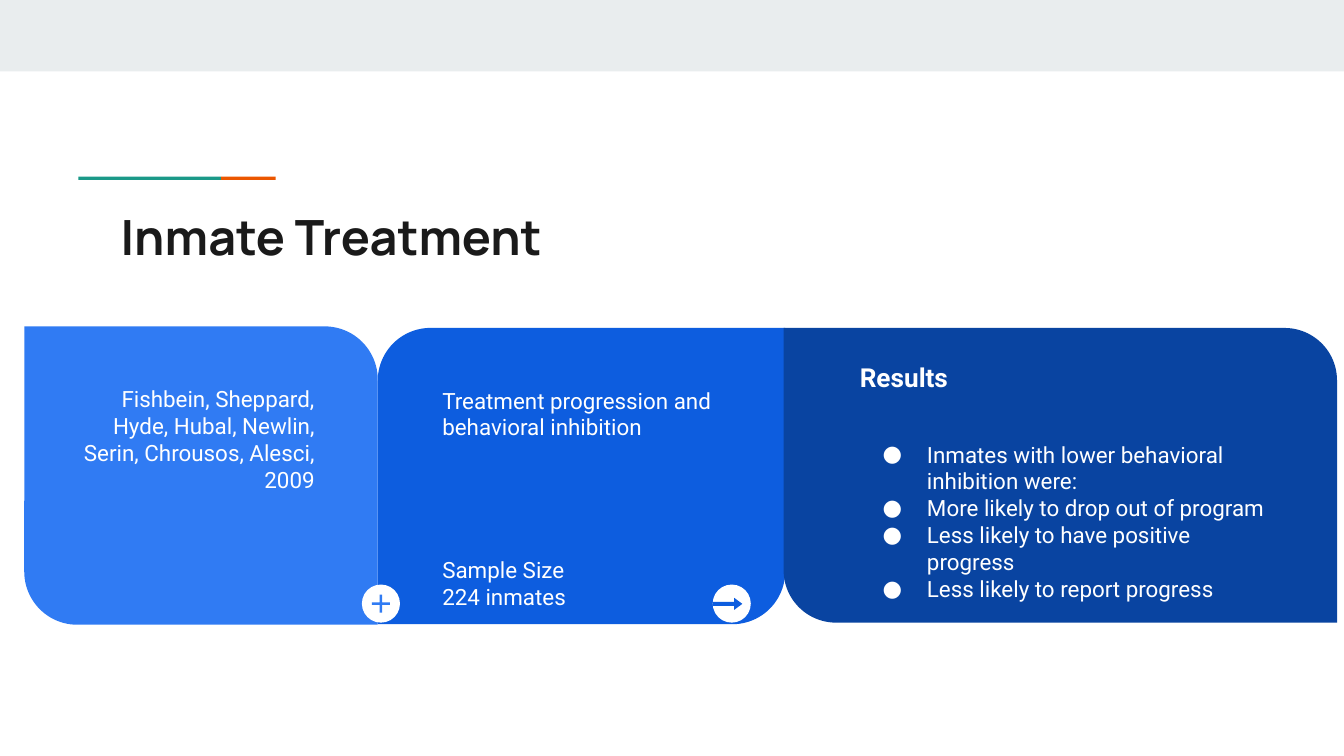
import pptx
import pptx.util
import pptx.dml.color
import pptx.enum.shapes
import pptx.enum.text
import pptx.oxml
import pptx.oxml.ns

Cm = pptx.util.Cm
KIND = pptx.enum.shapes.MSO_SHAPE
ALIGN = pptx.enum.text.PP_ALIGN
WHITE, LIGHT, MID, DARK = "FFFFFF", "307BF3", "0D5DDF", "0944A1"
INSET = 0.25
ROUND = 0.178


def tint(hue):
    return pptx.dml.color.RGBColor.from_string(hue)


def draw(slide, kind, box, hue, adjust=()):
    shape = slide.shapes.add_shape(kind, *map(Cm, box))
    shape.shadow.inherit = False
    shape.fill.solid()
    shape.fill.fore_color.rgb = tint(hue)
    shape.line.fill.background()
    for i, value in enumerate(adjust):
        shape.adjustments[i] = value
    return shape


def setup(frame):
    """Wrap, anchor at the top and set equal insets."""
    frame.word_wrap = True
    frame.auto_size = pptx.enum.text.MSO_AUTO_SIZE.NONE
    frame.vertical_anchor = pptx.enum.text.MSO_ANCHOR.TOP
    frame.margin_left = frame.margin_right = Cm(INSET)
    frame.margin_top = frame.margin_bottom = Cm(INSET)


def add_run(para, text, size, hue=WHITE, face="Roboto", bold=False):
    run = para.add_run()
    run.text = text
    run.font.size = pptx.util.Pt(size)
    run.font.name = face
    run.font.bold = bold
    run.font.color.rgb = tint(hue)


def add_dot(para):
    props = para._p.get_or_add_pPr()
    props.set("marL", str(Cm(1.27)))
    props.set("indent", str(Cm(-0.84)))
    space = pptx.oxml.ns.nsdecls("a")
    for xml in (
        f'<a:buClr {space}><a:srgbClr val="{WHITE}"/></a:buClr>',
        f'<a:buFont {space} typeface="Roboto"/>',
        f'<a:buChar {space} char="●"/>',
    ):
        props.append(pptx.oxml.parse_xml(xml))


def write(slide, box, lines, size=12, align=ALIGN.LEFT, bold=False, dots=False):
    frame = slide.shapes.add_textbox(*map(Cm, box)).text_frame
    setup(frame)
    for i, line in enumerate(lines):
        para = frame.add_paragraph() if i else frame.paragraphs[0]
        para.alignment = align
        if dots:
            add_dot(para)
        add_run(para, line, size, bold=bold)


def add_panel(slide, box, hue, adjust):
    draw(slide, KIND.ROUND_2_DIAG_RECTANGLE, box, hue, adjust)


def add_header(slide, box):
    x, y, w, h = box
    draw(slide, KIND.RECTANGLE, (x, y, w, 1.35), "E9EDEE")
    draw(slide, KIND.RECTANGLE, (x + 1.48, y + 3.34, 2.7, 0.06), "1A9988")
    draw(slide, KIND.RECTANGLE, (x + 4.18, y + 3.34, 1.03, 0.06), "EB5600")
    title = slide.shapes.title
    title.left, title.top = Cm(x + 2.03), Cm(y + 3.66)
    title.width, title.height = Cm(w - 4.04), Cm(h - 3.66)
    setup(title.text_frame)
    para = title.text_frame.paragraphs[0]
    para.alignment = ALIGN.LEFT
    add_run(para, "Inmate Treatment", 26, "1A1A1A", "Manrope", True)


def add_source(slide, box):
    x, y, w, h = box
    add_panel(slide, box, LIGHT, (0, ROUND))
    names = "Fishbein, Sheppard, Hyde, Hubal, Newlin, Serin, Chrousos, Alesci, 2009"
    write(slide, (x + 0.76, y + 0.86, w - 1.7, 1.65), [names], align=ALIGN.RIGHT)


def add_study(slide, box):
    x, y, w, h = box
    add_panel(slide, box, MID, (ROUND, 0))
    topic = "Treatment progression and behavioral inhibition"
    write(slide, (x + 0.97, y + 0.86, w - 1.96, 1.65), [topic])
    sample = ["Sample Size", "224 inmates"]
    write(slide, (x + 0.97, y + 4.06, w - 1.96, 1.83), sample)


def add_results(slide, box):
    x, y, w, h = box
    add_panel(slide, box, DARK, (0, ROUND))
    write(slide, (x + 1.19, y + 0.38, w - 2.03, 1.63), ["Results"], 14, bold=True)
    points = [
        "Inmates with lower behavioral inhibition were:",
        "More likely to drop out of program",
        "Less likely to have positive progress",
        "Less likely to report progress",
    ]
    write(slide, (x + 1.19, y + 1.88, w - 2.03, 1.83), points, dots=True)


def add_plus(slide, box):
    x, y, w, h = box
    draw(slide, KIND.OVAL, box, WHITE)
    draw(slide, KIND.MATH_PLUS, (x + 0.13, y + 0.13, w - 0.26, h - 0.26), LIGHT, [0.1])


def add_arrow(slide, box):
    x, y, w, h = box
    draw(slide, KIND.OVAL, box, WHITE)
    draw(slide, KIND.RIGHT_ARROW, (x, y + 0.25, w - 0.16, 0.23), MID, (0.32, 0.67))


def main():
    deck = pptx.Presentation()
    deck.slide_width, deck.slide_height = Cm(25.4), Cm(14.29)
    slide = deck.slides.add_slide(deck.slide_layouts[5])
    add_header(slide, (0, 0, 25.4, 5.16))
    add_study(slide, (7.14, 6.2, 7.7, 5.6))
    add_source(slide, (0.46, 6.17, 6.68, 5.64))
    add_arrow(slide, (13.47, 11.05, 0.72, 0.72))
    add_plus(slide, (6.84, 11.05, 0.72, 0.72))
    add_results(slide, (14.81, 6.2, 10.46, 5.57))
    deck.save("out.pptx")


if __name__ == "__main__":
    main()
